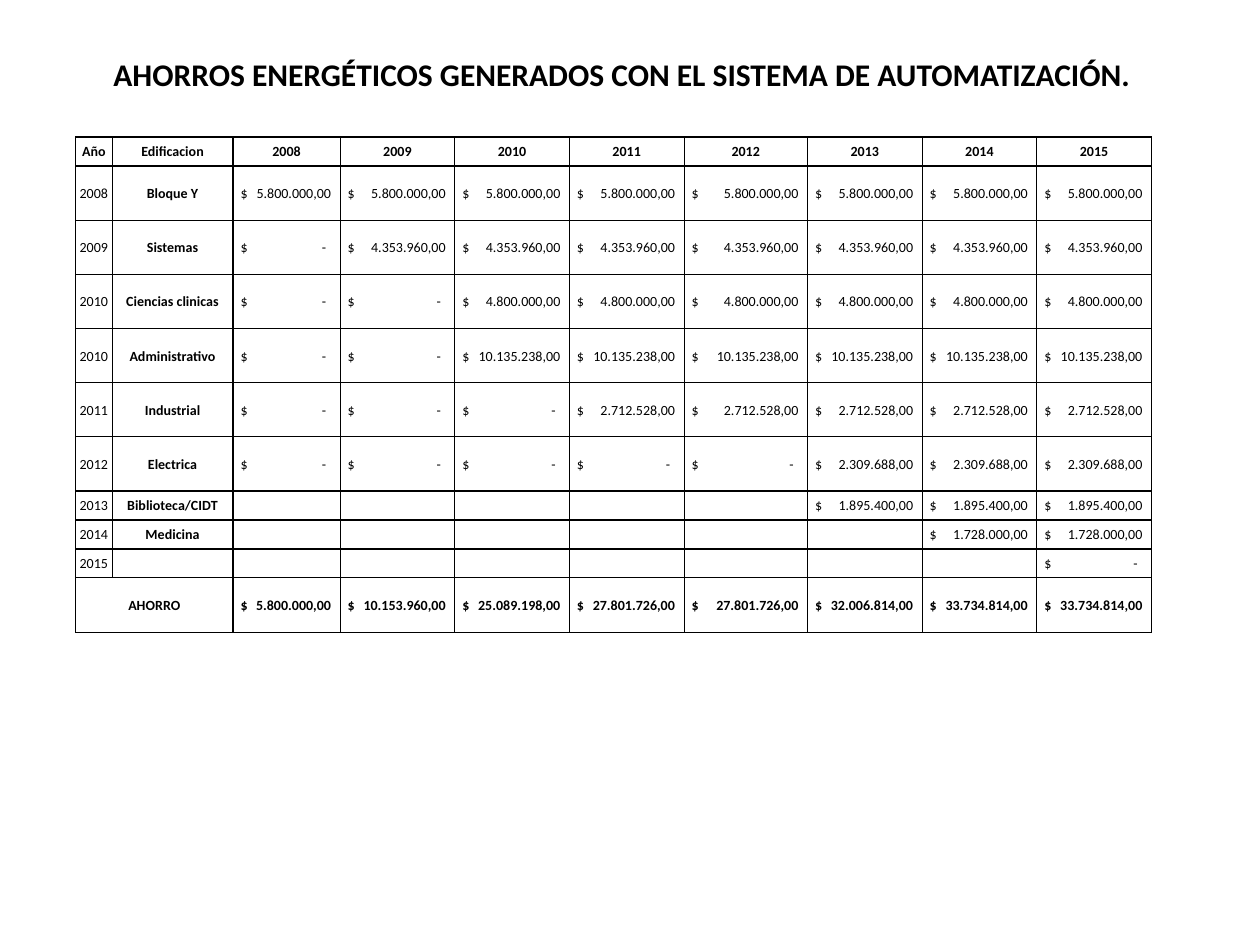
"""Build the slide of yearly energy savings produced by the automation system."""
from dataclasses import dataclass
from typing import Optional

from lxml import etree
from pptx import Presentation
from pptx import util as u
from pptx.dml import color
from pptx.enum import text
from pptx.oxml import ns

WIDTH, HEIGHT = 10, 7.5
FONT = "Calibri"
COLORS = {"ink": "000000"}
YEARS = range(2008, 2016)
COLUMNS = [0.29, 0.96, 0.85, 0.91, 0.91, 0.91, 0.98, 0.91, 0.91, 0.91]
SHORT, TALL = 0.23, 0.43
INDENT = 0.06


@dataclass(frozen=True)
class Building:
    """A building, its yearly saving and the first year that counts it."""
    year: int
    name: str
    saving: int
    start: int
    dashes: bool = True

    @property
    def height(self) -> float:
        return TALL if self.dashes else SHORT

    def amount(self, year: int) -> Optional[int]:
        if year >= self.start:
            return self.saving
        return 0 if self.dashes else None


BUILDINGS = [
    Building(2008, "Bloque Y", 5800000, 2008),
    Building(2009, "Sistemas", 4353960, 2009),
    Building(2010, "Ciencias clinicas", 4800000, 2010),
    Building(2010, "Administrativo", 10135238, 2010),
    Building(2011, "Industrial", 2712528, 2011),
    Building(2012, "Electrica", 2309688, 2013),
    Building(2013, "Biblioteca/CIDT", 1895400, 2013, False),
    Building(2014, "Medicina", 1728000, 2014, False),
    Building(2015, "", 0, 2015, False),
]


def style(span, size: float, bold: bool) -> None:
    """Format the font of a run."""
    for key, value in {"name": FONT, "size": u.Pt(size), "bold": bold}.items():
        setattr(span.font, key, value)
    span.font.color.rgb = color.RGBColor.from_string(COLORS["ink"])


def add_title(page, wording: str) -> None:
    """Place and format the title placeholder."""
    box = page.shapes.title
    place = {"left": 0.08 * WIDTH, "top": 0.052 * HEIGHT,
             "width": 0.877 * WIDTH, "height": 0.053 * HEIGHT}
    for key, value in place.items():
        setattr(box, key, u.Inches(value))
    frame = box.text_frame
    frame.auto_size = text.MSO_AUTO_SIZE.NONE
    frame.vertical_anchor = text.MSO_ANCHOR.MIDDLE
    para = frame.paragraphs[0]
    para.alignment = text.PP_ALIGN.LEFT
    span = para.add_run()
    span.text = wording
    style(span, 18, True)


def outline(cell) -> None:
    """Clear the fill of a cell and draw its four borders."""
    properties = cell._tc.get_or_add_tcPr()
    for side in ("lnL", "lnR", "lnT", "lnB"):
        line = etree.SubElement(properties, ns.qn(f"a:{side}"), w=str(u.Pt(0.75)))
        fill = etree.SubElement(line, ns.qn("a:solidFill"))
        etree.SubElement(fill, ns.qn("a:srgbClr"), val=COLORS["ink"])
    cell.fill.background()


def write(cell, wording: str, bold: bool = False):
    """Write centred text in a cell and return its paragraph."""
    margins = {"margin_left": 0.01, "margin_right": 0.01,
               "margin_top": 0.01, "margin_bottom": 0}
    for key, value in margins.items():
        setattr(cell, key, u.Inches(value))
    cell.vertical_anchor = text.MSO_ANCHOR.MIDDLE
    para = cell.text_frame.paragraphs[0]
    para.alignment = text.PP_ALIGN.CENTER
    if wording:
        span = para.add_run()
        span.text = wording
        style(span, 8, bold)
    else:
        etree.SubElement(para._p, ns.qn("a:endParaRPr"), sz="800")
    return para


def write_amount(cell, amount: Optional[int], width: float, bold: bool = False) -> None:
    """Write a peso sign at the left and the amount at a right tab stop."""
    if amount is None:
        write(cell, "")
        return
    number = f"{amount:,}".replace(",", ".") + ",00" if amount else "-"
    para = write(cell, f"$\t{number}", bold)
    para.alignment = text.PP_ALIGN.LEFT
    cell.margin_left = u.Inches(INDENT)
    stop = width - INDENT - (0.07 if amount else 0.11)
    tabs = etree.SubElement(para._p.get_or_add_pPr(), ns.qn("a:tabLst"))
    etree.SubElement(tabs, ns.qn("a:tab"), pos=str(u.Inches(stop)), algn="r")


def add_savings(page) -> None:
    """Draw the table of savings with a closing row of totals."""
    heights = [SHORT, *(building.height for building in BUILDINGS), TALL]
    table = page.shapes.add_table(
        len(heights), len(COLUMNS), u.Inches(0.06 * WIDTH), u.Inches(0.145 * HEIGHT),
        u.Inches(sum(COLUMNS)), u.Inches(sum(heights))).table
    table.first_row = table.horz_banding = False
    for column, width in zip(table.columns, COLUMNS):
        column.width = u.Inches(width)
    for row, height in zip(table.rows, heights):
        row.height = u.Inches(height)
    for cell in table.iter_cells():
        outline(cell)

    for column, heading in enumerate(["Año", "Edificacion", *YEARS]):
        write(table.cell(0, column), str(heading), True)
    for row, building in enumerate(BUILDINGS, 1):
        write(table.cell(row, 0), str(building.year))
        write(table.cell(row, 1), building.name, True)
        for column, year in enumerate(YEARS, 2):
            write_amount(table.cell(row, column), building.amount(year), COLUMNS[column])

    last = len(heights) - 1
    table.cell(last, 0).merge(table.cell(last, 1))
    write(table.cell(last, 0), "AHORRO", True)
    for column, year in enumerate(YEARS, 2):
        total = sum(building.amount(year) or 0 for building in BUILDINGS)
        write_amount(table.cell(last, column), total, COLUMNS[column], True)


def main() -> None:
    """Build and save the deck."""
    deck = Presentation()
    deck.slide_width, deck.slide_height = u.Inches(WIDTH), u.Inches(HEIGHT)
    page = deck.slides.add_slide(deck.slide_layouts[5])
    add_title(page, "AHORROS ENERGÉTICOS GENERADOS CON EL SISTEMA DE AUTOMATIZACIÓN.")
    add_savings(page)
    deck.save("out.pptx")


if __name__ == "__main__":
    main()
